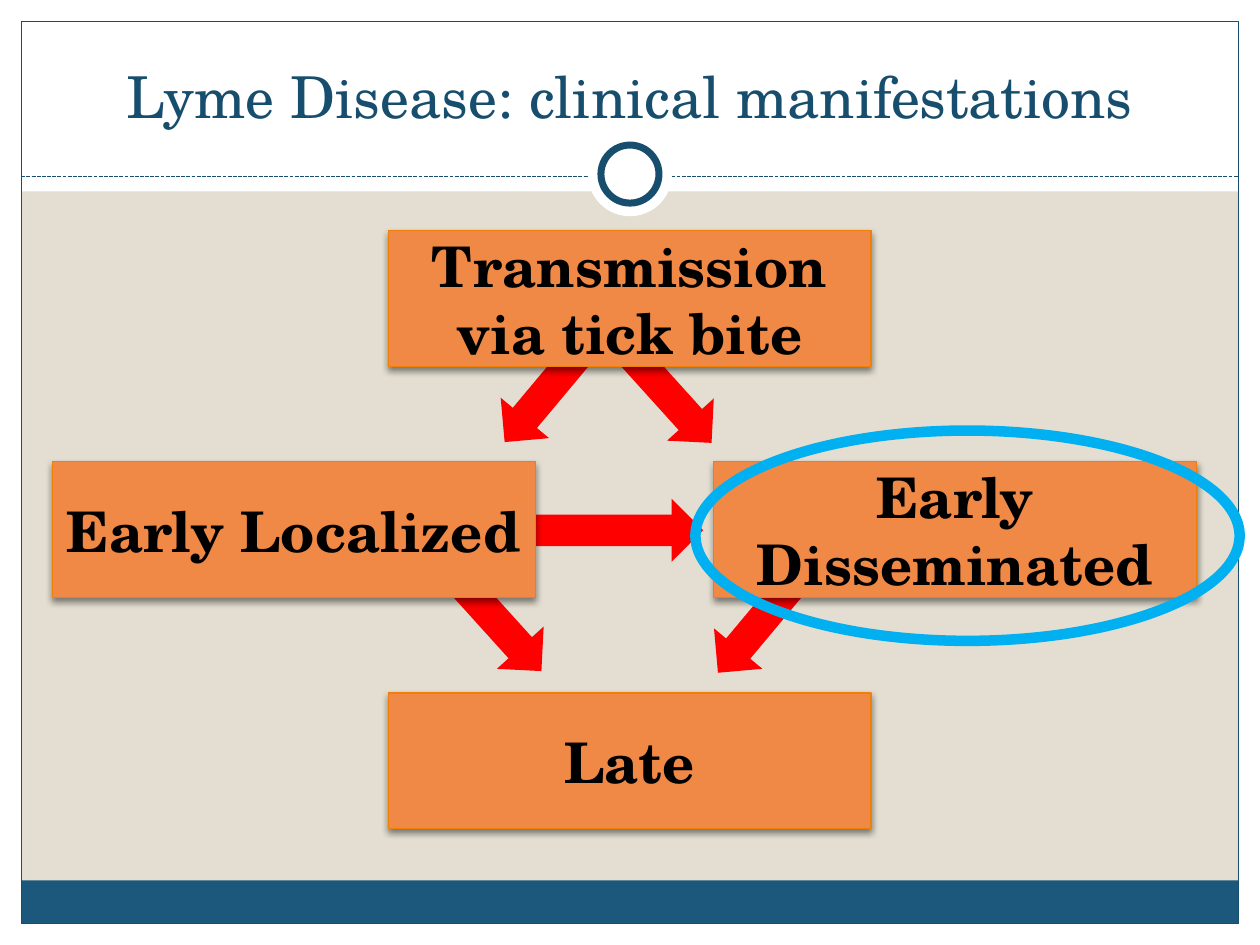
from lxml.etree import SubElement
from pptx import Presentation
from pptx.dml.color import RGBColor as Rgb
from pptx.enum.dml import MSO_LINE as Dash
from pptx.enum.shapes import MSO_CONNECTOR as Connector, MSO_SHAPE as Shape
from pptx.enum.text import MSO_ANCHOR as Anchor, PP_ALIGN as Align
from pptx.oxml.ns import qn
from pptx.util import Cm, Pt

COLORS = {
    "sand": "E3DED1", "white": "FFFFFF", "navy": "184E6D", "band": "1B587C",
    "box": "F18946", "edge": "F07F09", "red": "FF0000", "sky": "00B0F0",
    "black": "000000",
}
WIDTH, HEIGHT, MARGIN = 25.4, 19.05, 0.43


class DiagramSlide:
    """Draws styled elements on one slide, with lengths in centimetres."""

    font_name = "TeX Gyre Schola"

    def __init__(self, deck):
        self.slide = deck.slides.add_slide(deck.slide_layouts[6])
        self.shapes = self.slide.shapes

    def color(self, name):
        return Rgb.from_string(COLORS[name])

    def background(self, name):
        fill = self.slide.background.fill
        fill.solid()
        fill.fore_color.rgb = self.color(name)

    def shape(self, kind, left, top, width, height, fill=None, line=None, weight=0.75):
        shape = self.shapes.add_shape(kind, Cm(left), Cm(top), Cm(width), Cm(height))
        shape.shadow.inherit = False
        if fill:
            shape.fill.solid()
            shape.fill.fore_color.rgb = self.color(fill)
        else:
            shape.fill.background()
        if line:
            shape.line.color.rgb = self.color(line)
            shape.line.width = Pt(weight)
        else:
            shape.line.fill.background()
        return shape

    def circle(self, center_x, center_y, size, **style):
        self.shape(Shape.OVAL, center_x - size / 2, center_y - size / 2, size, size, **style)

    def dashed_rule(self, left, right, y):
        rule = self.shapes.add_connector(Connector.STRAIGHT, Cm(left), Cm(y), Cm(right), Cm(y))
        rule.line.color.rgb = self.color("navy")
        rule.line.width = Pt(0.75)
        rule.line.dash_style = Dash.SQUARE_DOT
        SubElement(rule._element.spPr, qn("a:effectLst"))

    def arrow(self, center_x, center_y, length, angle):
        width = 1.27
        arrow = self.shape(Shape.DOWN_ARROW, center_x - width / 2, center_y - length / 2,
                           width, length, fill="red")
        arrow.rotation = angle

    def add_text(self, frame, text, size, color, anchor, bold=False):
        frame.word_wrap = True
        frame.vertical_anchor = anchor
        paragraph = frame.paragraphs[0]
        paragraph.alignment = Align.CENTER
        run = paragraph.add_run()
        run.text = text
        run.font.name = self.font_name
        run.font.size = Pt(size)
        run.font.bold = bold
        run.font.color.rgb = self.color(color)

    def title(self, text):
        title = self.shapes.add_textbox(Cm(0.85), Cm(0.64), Cm(23.7), Cm(2.11))
        self.add_text(title.text_frame, text, 33, "navy", Anchor.BOTTOM)

    def stage(self, text, left, top):
        stage = self.shape(Shape.RECTANGLE, left, top, 9.73, 2.74, fill="box", line="edge")
        self.cast_shadow(stage)
        self.add_text(stage.text_frame, text, 32, "black", Anchor.MIDDLE, bold=True)

    def cast_shadow(self, shape):
        effects = shape._element.spPr.find(qn("a:effectLst"))
        shadow = SubElement(effects, qn("a:outerShdw"), blurRad=str(Pt(4)), dist=str(Pt(2)),
                            dir="5400000", rotWithShape="0")
        tint = SubElement(shadow, qn("a:srgbClr"), val=COLORS["black"])
        SubElement(tint, qn("a:alpha"), val="45000")


def main():
    deck = Presentation()
    deck.slide_width, deck.slide_height = Cm(WIDTH), Cm(HEIGHT)
    page = DiagramSlide(deck)
    page.background("sand")

    inner_width = WIDTH - 2 * MARGIN
    for border in (
        (0, HEIGHT - MARGIN, WIDTH, MARGIN),
        (0, 0, WIDTH, 3.86),
        (0, 0, MARGIN, HEIGHT),
        (WIDTH - MARGIN, 0, MARGIN, HEIGHT),
    ):
        page.shape(Shape.RECTANGLE, *border, fill="white")
    page.shape(Shape.RECTANGLE, MARGIN, 17.75, inner_width, 0.87, fill="band")
    page.shape(Shape.RECTANGLE, MARGIN, MARGIN, inner_width, HEIGHT - 2 * MARGIN, line="navy")
    page.dashed_rule(MARGIN, WIDTH - MARGIN, 3.56)
    page.circle(WIDTH / 2, 3.51, 1.7, fill="white")
    page.circle(WIDTH / 2, 3.51, 1.17, fill="white", line="navy", weight=4)

    for center_x, center_y, length, angle in (
        (12.27, 10.69, 3.81, 270),
        (15.32, 12.55, 2.64, 39.9),
        (10.03, 12.55, 2.64, 317.9),
        (13.46, 7.95, 2.64, 317.9),
        (11.02, 7.9, 2.64, 39.9),
    ):
        page.arrow(center_x, center_y, length, angle)

    page.title("Lyme Disease: clinical manifestations")
    first_row, row_step = 4.65, 4.66
    for text, left, row in (
        ("Transmission via tick bite", 7.83, 0),
        ("Early Localized", 1.06, 1),
        ("Early Disseminated", 14.39, 1),
        ("Late", 7.83, 2),
    ):
        page.stage(text, left, first_row + row * row_step)
    page.shape(Shape.OVAL, 14.02, 8.68, 10.97, 4.24, line="sky", weight=6)

    deck.save("out.pptx")


if __name__ == "__main__":
    main()
